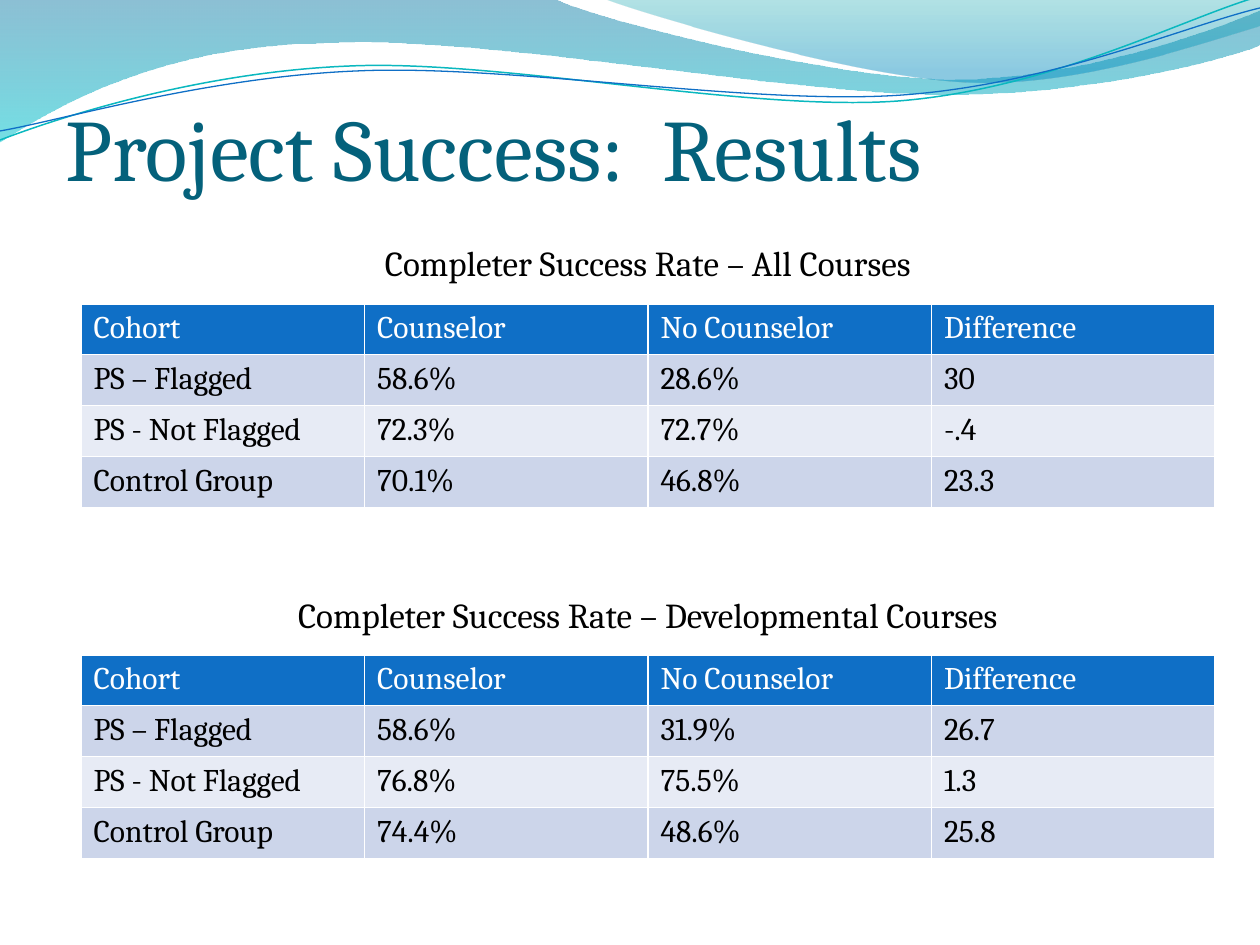
from lxml.etree import SubElement
from pptx import Presentation
from pptx.dml.color import RGBColor
from pptx.enum.text import MSO_ANCHOR, PP_ALIGN
from pptx.oxml.ns import qn
from pptx.util import Pt

FONT = "Cambria"
TITLE = "Project Success:  Results"
HEADER = ("Cohort", "Counselor", "No Counselor", "Difference")
# caption, caption top, table top, rows
TABLES = [
    ("Completer Success Rate – Developmental Courses", 587, 655, [
        ("PS – Flagged", "58.6%", "31.9%", "26.7"),
        ("PS - Not Flagged", "76.8%", "75.5%", "1.3"),
        ("Control Group", "74.4%", "48.6%", "25.8"),
    ]),
    ("Completer Success Rate – All Courses", 235, 304, [
        ("PS – Flagged", "58.6%", "28.6%", "30"),
        ("PS - Not Flagged", "72.3%", "72.7%", "-.4"),
        ("Control Group", "70.1%", "46.8%", "23.3"),
    ]),
]
TABLE_LEFT, TABLE_W, TABLE_H = 81, 1134, 204
HEADER_H, ROW_H = 20, 51  # the header row grows to fit its text
HEADER_FILL, BAND_FILLS = "0F6FC6", ("CCD5EA", "E7EBF5")

# Outlines: a start point, then lines (one point) or Bezier curves (three points)
# Gradient stops: position, colour, opacity in percent
WAVES = [
    ([[(0, 0)], [(554, -1)],
      [(600, 21), (837, 79), (955, 79)], [(1075, 79), (1207, 33), (1260, 11)],
      [(1261, 45)],
      [(1239, 55), (1096, 96), (940, 94)], [(784, 94), (481, 35), (324, 43)],
      [(163, 45), (58, 105), (-1, 142)], [(0, 0)]],
     [(0, "0074A1", 45), (1, "00C6CF", 55)]),
    ([[(604, -1)],
      [(641, 14), (859, 78), (969, 82)], [(1079, 87), (1211, 40), (1260, 26)],
      [(1260, 0)], [(604, -1)]],
     [(0, "00A1A9", 30), (0.8, "008BBF", 45)]),
]
STRANDS = [
    ([[(0, 140)], [(60, 117), (199, 72), (349, 66)],
      [(498, 59), (747, 112), (898, 101)], [(1050, 89), (1182, 19), (1257, -3)]],
     "0AB8BF", 0.85),
    ([[(0, 131)], [(59, 121), (207, 77), (357, 71)],
      [(508, 64), (752, 106), (903, 95)], [(1053, 84), (1185, 26), (1260, 8)]],
     "0F6FC6", 0.75),
]


def px(n):
    return round(n * 914400 / 126)


def rgb(color):
    return RGBColor.from_string(color)


def add_outline(slide, outline, close):
    """Build a freeform through all points, then join each three into a curve."""
    start, *rest = [(px(x), px(y)) for segment in outline for x, y in segment]
    builder = slide.shapes.build_freeform(*start)
    builder.add_line_segments(rest, close=close)
    sp = builder.convert_to_shape()
    sp.shadow.inherit = False
    lines = iter(list(sp._element.iter(qn("a:lnTo"))))
    for segment in outline[1:]:
        line = next(lines)
        if len(segment) == 3:
            curve = line.makeelement(qn("a:cubicBezTo"))
            line.addprevious(curve)
            for part in (line, next(lines), next(lines)):
                curve.append(part[0])
                part.getparent().remove(part)
    return sp


def add_wave(slide, outline, stops):
    sp = add_outline(slide, outline, True)
    sp.line.fill.background()
    sp.fill.gradient()
    sp.fill.gradient_angle = 270
    for stop, (position, color, _) in zip(sp.fill.gradient_stops, stops):
        stop.position = position
        stop.color.rgb = rgb(color)
    for clr, (_, _, opacity) in zip(sp._element.spPr.iter(qn("a:srgbClr")), stops):
        SubElement(clr, qn("a:alpha"), val=str(opacity * 1000))


def add_strand(slide, outline, color, width):
    sp = add_outline(slide, outline, False)
    sp.fill.background()
    sp.line.color.rgb = rgb(color)
    sp.line.width = Pt(width)


def write(tf, text, size, color, align=PP_ALIGN.LEFT):
    p = tf.paragraphs[0]
    p.alignment = align
    r = p.add_run()
    r.text = text
    r.font.name = FONT
    r.font.size = Pt(size)
    r.font.bold = False
    r.font.color.rgb = rgb(color)


def add_text_box(slide, x, y, w, h):
    tf = slide.shapes.add_textbox(px(x), px(y), px(w), px(h)).text_frame
    tf.word_wrap = True
    return tf


def set_borders(cell, color, width):
    tc_pr = cell._tc.get_or_add_tcPr()
    for side in ("a:lnL", "a:lnR", "a:lnT", "a:lnB"):
        ln = SubElement(tc_pr, qn(side), w=str(Pt(width)))
        fill = SubElement(ln, qn("a:solidFill"))
        SubElement(fill, qn("a:srgbClr"), val=color)


def add_result_table(slide, top, rows):
    cells = [HEADER, *rows]
    frame = slide.shapes.add_table(
        len(cells), len(HEADER), px(TABLE_LEFT), px(top), px(TABLE_W), px(TABLE_H))
    table = frame.table
    for i, values in enumerate(cells):
        table.rows[i].height = px(ROW_H if i else HEADER_H)
        fill = BAND_FILLS[(i - 1) % 2] if i else HEADER_FILL
        for j, value in enumerate(values):
            cell = table.cell(i, j)
            set_borders(cell, "FFFFFF", 1)
            cell.fill.solid()
            cell.fill.fore_color.rgb = rgb(fill)
            write(cell.text_frame, value, 18, "000000" if i else "FFFFFF")
    frame.height = px(TABLE_H)


def main():
    prs = Presentation()
    prs.slide_width, prs.slide_height = px(1260), px(945)
    slide = prs.slides.add_slide(prs.slide_layouts[6])

    for wave in WAVES:
        add_wave(slide, *wave)
    for strand in STRANDS:
        add_strand(slide, *strand)

    title = add_text_box(slide, 66, 42, 1134, 157)
    title.margin_left = title.margin_right = title.margin_bottom = 0
    title.vertical_anchor = MSO_ANCHOR.BOTTOM
    write(title, TITLE, 50, "04617B")

    for caption, caption_top, table_top, rows in TABLES:
        add_result_table(slide, table_top, rows)
        tf = add_text_box(slide, 231, caption_top, 834, 55)
        write(tf, caption, 20, "000000", PP_ALIGN.CENTER)

    prs.save("out.pptx")


if __name__ == "__main__":
    main()
